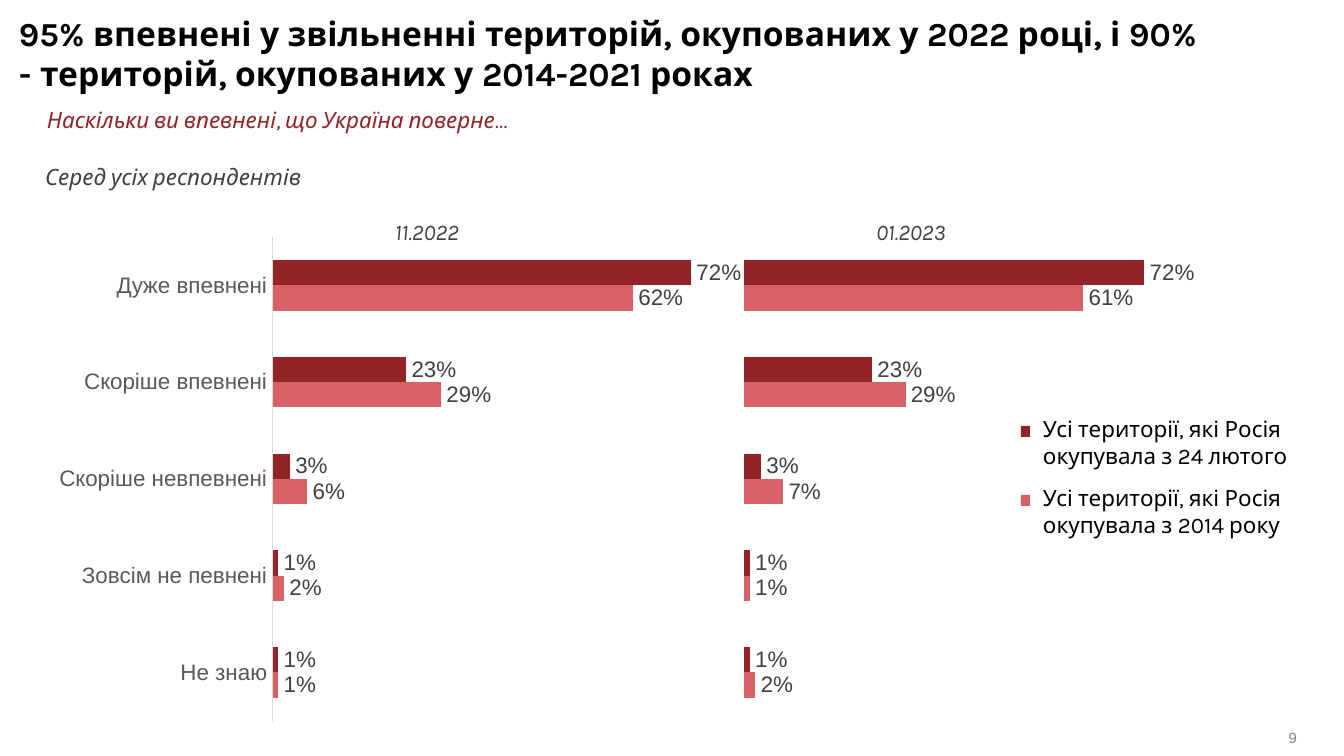
from lxml import etree
from pptx import Presentation
from pptx.chart.data import CategoryChartData
from pptx.dml.color import RGBColor
from pptx.enum.chart import XL_CHART_TYPE, XL_LABEL_POSITION, XL_TICK_MARK
from pptx.enum.shapes import MSO_SHAPE
from pptx.enum.text import MSO_ANCHOR, MSO_AUTO_SIZE, PP_ALIGN
from pptx.oxml.ns import qn
from pptx.util import Emu, Pt

BARS = XL_CHART_TYPE.BAR_CLUSTERED
OUTSIDE = XL_LABEL_POSITION.OUTSIDE_END
NO_TICK = XL_TICK_MARK.NONE
RECT = MSO_SHAPE.RECTANGLE
TOP, MIDDLE = MSO_ANCHOR.TOP, MSO_ANCHOR.MIDDLE
LEFT, RIGHT = PP_ALIGN.LEFT, PP_ALIGN.RIGHT

SCALE = 914400 / 134.4
COLORS = {
    "dark": "922428", "light": "D86165", "black": "000000", "text": "404040",
    "label": "595959", "axis": "D9D9D9", "page": "808585",
}


def px(count):
    return Emu(round(count * SCALE))


def color(name):
    return RGBColor.from_string(COLORS[name])


def style(font, size=12, name="Karla", tint="text", bold=False, italic=False):
    font.size, font.name = Pt(size), name
    font.bold, font.italic = bold, italic
    font.color.rgb = color(tint)


def write(frame, text, align=LEFT, anchor=TOP, pad=(0, 0), **look):
    """Fill a text frame with one formatted paragraph."""
    frame.word_wrap = True
    frame.auto_size = MSO_AUTO_SIZE.NONE
    frame.vertical_anchor = anchor
    frame.margin_left = frame.margin_right = px(pad[0])
    frame.margin_top = frame.margin_bottom = px(pad[1])
    line = frame.paragraphs[0]
    line.alignment = align
    run = line.add_run()
    run.text = text
    style(run.font, **look)


def set_plot(chart, **area):
    """Fix the inner plot area, given as shares of the chart size."""
    plot = chart.element.find(".//" + qn("c:plotArea"))
    for old in plot.findall(qn("c:layout")):
        plot.remove(old)
    layout = etree.Element(qn("c:layout"))
    plot.insert(0, layout)
    manual = etree.SubElement(layout, qn("c:manualLayout"))
    parts = {"layoutTarget": "inner", "xMode": "edge", "yMode": "edge", **area}
    for tag, value in parts.items():
        etree.SubElement(manual, qn("c:" + tag)).set("val", str(value))


class Deck:
    def __init__(self, width, height):
        self.file = Presentation()
        self.file.slide_width, self.file.slide_height = px(width), px(height)
        self.slide = self.file.slides.add_slide(self.file.slide_layouts[5])

    def title(self, text, box, **look):
        shape = self.slide.shapes.title
        shape.left, shape.top, shape.width, shape.height = map(px, box)
        write(shape.text_frame, text, **look)

    def text(self, text, box, **look):
        shape = self.slide.shapes.add_textbox(*map(px, box))
        write(shape.text_frame, text, **look)

    def square(self, box, tint):
        shape = self.slide.shapes.add_shape(RECT, *map(px, box))
        shape.shadow.inherit = False
        shape.fill.solid()
        shape.fill.fore_color.rgb = color(tint)
        shape.line.fill.background()

    def chart(self, box, cats, rows, area, named):
        data = CategoryChartData(number_format="0%")
        data.categories = cats
        for count, row in enumerate(rows, 1):
            data.add_series(f"Series {count}", row)
        chart = self.slide.shapes.add_chart(BARS, *map(px, box), data).chart
        style(chart.font, size=10, name="Arial", tint="black")
        chart.has_legend = chart.has_title = False
        set_plot(chart, **area)

        plot = chart.plots[0]
        plot.gap_width, plot.overlap = 182, 0
        plot.vary_by_categories = False
        for series, tint in zip(plot.series, ("dark", "light")):
            series.format.fill.solid()
            series.format.fill.fore_color.rgb = color(tint)
            labels = series.data_labels
            labels.show_value = True
            labels.position = OUTSIDE
            labels.number_format = "0%"
            labels.number_format_is_linked = False
            style(labels.font, name="Arial")

        scale = chart.value_axis
        scale.minimum_scale, scale.maximum_scale = 0, 0.8
        scale.has_major_gridlines = False
        scale.visible = False
        axis = chart.category_axis
        axis.reverse_order = True
        axis.visible = named
        if named:
            axis.major_tick_mark = axis.minor_tick_mark = NO_TICK
            axis.format.line.color.rgb = color("axis")
            axis.format.line.width = Pt(0.75)
            style(axis.tick_labels.font, name="Arial", tint="label")


def main():
    deck = Deck(1344, 756)
    deck.title("95% впевнені у звільненні територій, окупованих у 2022 році, і 90% "
               "- територій, окупованих у 2014-2021 роках",
               (19, 13, 1192, 82), size=18, tint="black", bold=True)
    deck.text("9", (1106, 727, 191, 22), align=RIGHT, anchor=MIDDLE,
              size=8, name="Arial", tint="page")
    deck.text("Наскільки ви впевнені, що Україна поверне…",
              (47, 106, 1117, 27), tint="dark", italic=True)
    deck.text("Серед усіх респондентів", (32, 156, 371, 40),
              pad=(13, 7), italic=True)

    cats = ["Дуже впевнені", "Скоріше впевнені", "Скоріше невпевнені",
            "Зовсім не певнені", "Не знаю"]
    recent = [0.72, 0.23, 0.03, 0.01, 0.01]
    rise = {"y": 0.02, "h": 0.96}
    deck.chart((47, 227, 705, 504), cats,
               [recent, [0.62, 0.29, 0.06, 0.02, 0.01]],
               {"x": 0.32, "y": rise["y"], "w": 0.66, "h": rise["h"]}, True)
    deck.chart((735, 227, 468, 504), ["1", "2", "3", "4", "5"],
               [recent, [0.61, 0.29, 0.07, 0.01, 0.02]],
               {"x": 0.02, "y": rise["y"], "w": 0.95, "h": rise["h"]}, False)
    for date, left, width in (("11.2022", 382, 202), ("01.2023", 863, 161)):
        deck.text(date, (left, 211, width, 40), pad=(13, 7), italic=True)

    legend = (("24 лютого", "dark"), ("2014 року", "light"))
    for row, (start, tint) in enumerate(legend):
        top = 415 + 69 * row
        deck.square((1021, top + 11, 9, 11), tint)
        deck.text(f"Усі території, які Росія окупувала з {start}",
                  (1043, top, 301, 54), tint="black")
    deck.file.save("out.pptx")


if __name__ == "__main__":
    main()
